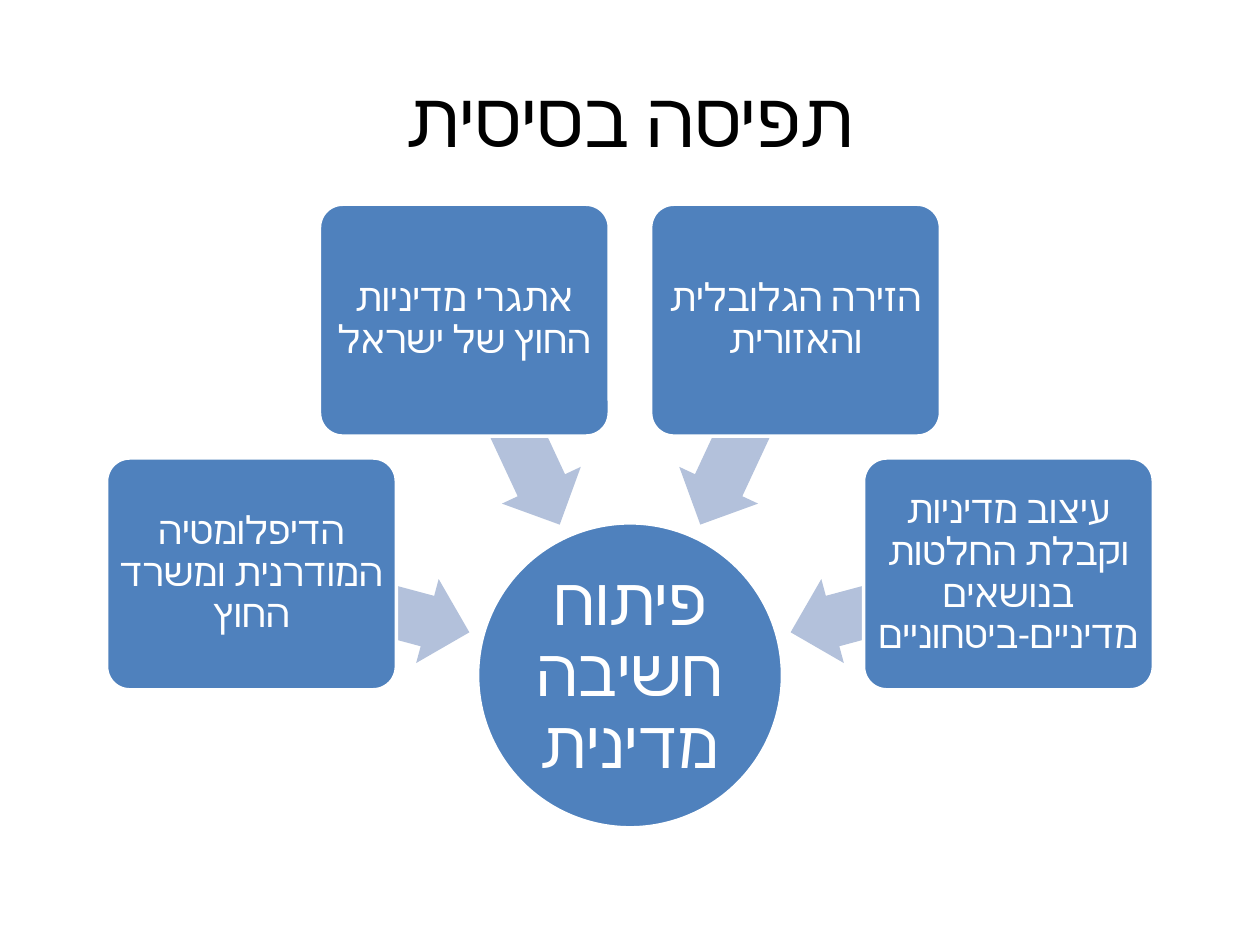
from math import cos, radians, sin

from lxml import etree
from pptx import Presentation
from pptx.dml.color import RGBColor
from pptx.enum.shapes import MSO_SHAPE
from pptx.enum.text import MSO_ANCHOR, PP_ALIGN
from pptx.oxml.ns import qn
from pptx.util import Inches, Pt

ELLIPSE = MSO_SHAPE.OVAL
ROUNDED = MSO_SHAPE.ROUNDED_RECTANGLE
LEFT_ARROW = MSO_SHAPE.LEFT_ARROW
CENTER = PP_ALIGN.CENTER
MIDDLE = MSO_ANCHOR.MIDDLE

FONT = "Calibri"
COLORS = {"blue": "4F81BD", "arrow": "B3C1DB", "white": "FFFFFF", "black": "000000"}

HUB_CENTER = (5, 5.36)
HUB_SIZE = (2.42, 2.42)
TOPIC_SIZE = (2.3, 1.84)
ARROW_SIZE = (1.8, 0.69)
TOPIC_RADIUS = 3.11
ARROW_RADIUS = 2.22
FIRST_ANGLE = 195
ANGLE_STEP = 50

TOPICS = [
    "הדיפלומטיה המודרנית ומשרד החוץ",
    "אתגרי מדיניות החוץ של ישראל",
    "הזירה הגלובלית והאזורית",
    "עיצוב מדיניות וקבלת החלטות בנושאים מדיניים-ביטחוניים",
]


def color(name):
    return RGBColor.from_string(COLORS[name])


def set_values(target, values):
    for name, value in values.items():
        setattr(target, name, value)


def point_around_hub(angle, radius):
    x, y = HUB_CENTER
    return x + radius * cos(radians(angle)), y + radius * sin(radians(angle))


def write_text(box, text, size, color_name, spacing, inset):
    frame = box.text_frame
    margins = {f"margin_{side}": Inches(inset) for side in ("left", "right", "top", "bottom")}
    set_values(frame, {"word_wrap": True, "vertical_anchor": MIDDLE, **margins})
    para = frame.paragraphs[0]
    set_values(para, {"alignment": CENTER, "line_spacing": spacing})
    para._p.get_or_add_pPr().set("rtl", "1")
    span = para.add_run()
    span.text = text
    set_values(span.font, {"name": FONT, "size": Pt(size)})
    span.font.color.rgb = color(color_name)
    etree.SubElement(span._r.get_or_add_rPr(), qn("a:cs"), typeface=FONT)


def add_centered_shape(page, kind, center, size, fill):
    (x, y), (width, height) = center, size
    shape = page.shapes.add_shape(
        kind, Inches(x - width / 2), Inches(y - height / 2), Inches(width), Inches(height)
    )
    shape.shadow.inherit = False
    shape.fill.solid()
    shape.fill.fore_color.rgb = color(fill)
    shape.line.fill.background()
    return shape


def add_node(page, kind, center, size, text, text_size, inset):
    node = add_centered_shape(page, kind, center, size, "blue")
    node.line.color.rgb = color("white")
    node.line.width = Pt(2)
    write_text(node, text, text_size, "white", 0.9, inset)
    return node


def add_topic(page, text, angle):
    arrow_center = point_around_hub(angle, ARROW_RADIUS)
    arrow = add_centered_shape(page, LEFT_ARROW, arrow_center, ARROW_SIZE, "arrow")
    arrow.rotation = angle
    arrow.adjustments[0] = 0.6
    arrow.adjustments[1] = 0.5
    topic_center = point_around_hub(angle, TOPIC_RADIUS)
    topic = add_node(page, ROUNDED, topic_center, TOPIC_SIZE, text, 22, 0)
    topic.adjustments[0] = 0.1


def add_title(page, text):
    box = page.shapes.add_textbox(Inches(0.5), Inches(0.3), Inches(9), Inches(1.25))
    write_text(box, text, 44, "black", 1.0, 0.1)


def main():
    deck = Presentation()
    set_values(deck, {"slide_width": Inches(10), "slide_height": Inches(7.5)})
    page = deck.slides.add_slide(deck.slide_layouts[6])
    add_node(page, ELLIPSE, HUB_CENTER, HUB_SIZE, "פיתוח חשיבה מדינית", 38, 0.03)
    for index, text in enumerate(TOPICS):
        add_topic(page, text, FIRST_ANGLE + index * ANGLE_STEP)
    add_title(page, "תפיסה בסיסית")
    deck.save("out.pptx")


if __name__ == "__main__":
    main()
